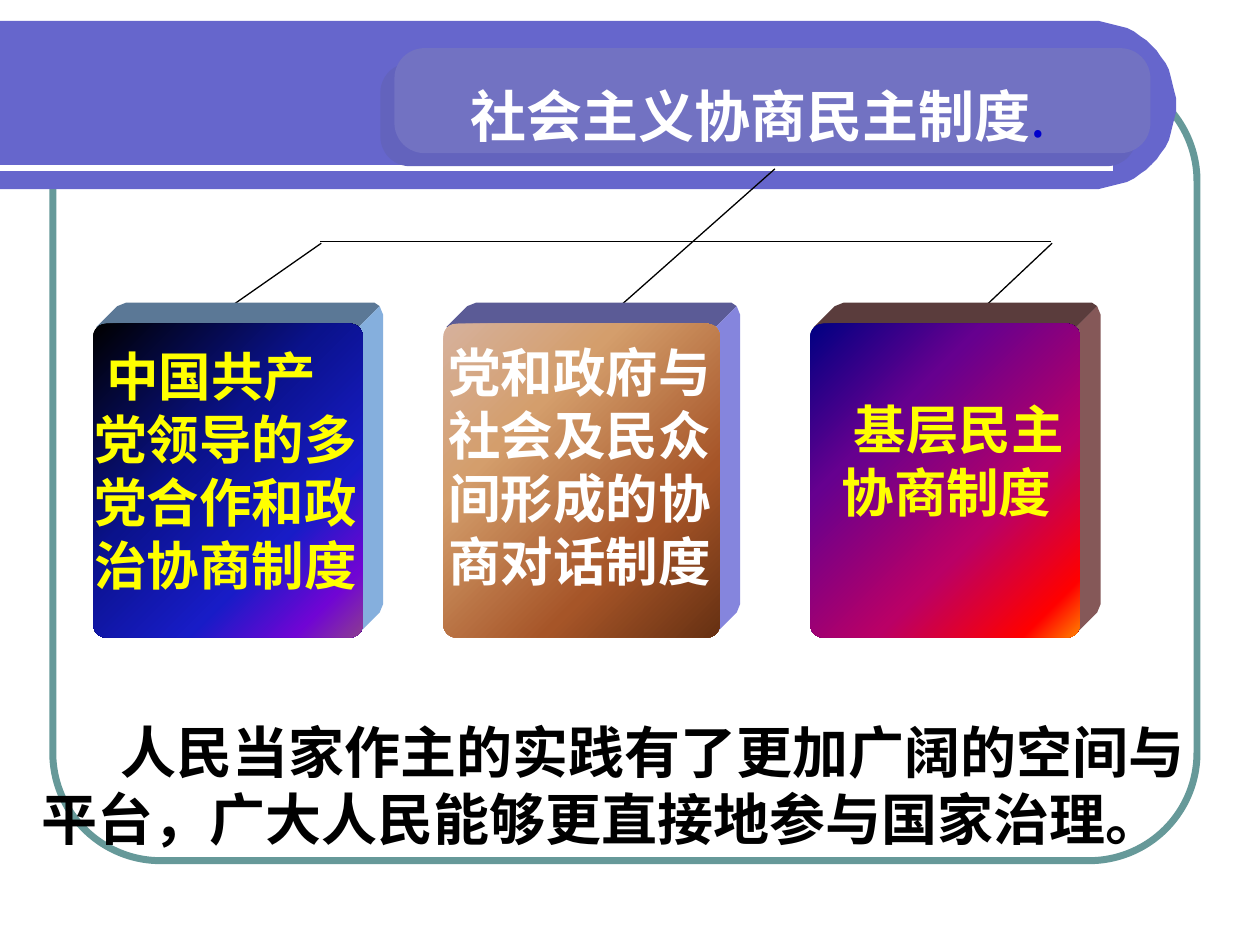
import math

import pptx
import pptx.dml.color
import pptx.enum.shapes
import pptx.enum.text
import pptx.oxml.ns
import pptx.util
from lxml import etree

Pt = pptx.util.Pt
RGB = pptx.dml.color.RGBColor
PRESET = pptx.enum.shapes.MSO_SHAPE
ANCHOR = pptx.enum.text.MSO_ANCHOR
qn = pptx.oxml.ns.qn

BLACK, WHITE = RGB(0, 0, 0), RGB(255, 255, 255)
YELLOW, BLUE = RGB(255, 255, 0), RGB(0, 0, 0xCC)
TEAL, VIOLET = RGB(0x66, 0x99, 0x99), RGB(0x66, 0x66, 0xCC)
PANEL, PANEL_EDGE = RGB(0x72, 0x72, 0xC2), RGB(0x63, 0x63, 0xBD)
DEPTH = 12  # how far the raised cards reach back, up and to the right


class Board:
    """Holds the slide and its font, and draws each kind of element."""

    def __init__(self, slide, font):
        self.slide, self.shapes, self.font = slide, slide.shapes, font

    def paint(self, shape, fill=None, line=None, width=1):
        shape.shadow.inherit = False
        if fill is None:
            shape.fill.background()
        else:
            shape.fill.solid()
            shape.fill.fore_color.rgb = fill
        if line is None:
            shape.line.fill.background()
        else:
            shape.line.color.rgb = line
            shape.line.width = Pt(width)

    def rounded(self, x, y, w, h, corner, **style):
        shape = self.shapes.add_shape(PRESET.ROUNDED_RECTANGLE, Pt(x), Pt(y), Pt(w), Pt(h))
        shape.adjustments[0] = corner
        self.paint(shape, **style)
        return shape

    def outline(self, points, fill):
        builder = self.shapes.build_freeform(*points[0], scale=Pt(1))
        builder.add_line_segments(points[1:], close=True)
        self.paint(builder.convert_to_shape(), fill)

    def line(self, x1, y1, x2, y2, color=BLACK, width=0.75):
        connector = self.shapes.add_connector(
            pptx.enum.shapes.MSO_CONNECTOR.STRAIGHT, Pt(x1), Pt(y1), Pt(x2), Pt(y2))
        connector.line.color.rgb = color
        connector.line.width = Pt(width)
        etree.SubElement(connector.element.spPr, qn("a:effectLst"))

    def gradient(self, shape, stops):
        shape.fill.gradient()
        shape.fill.gradient_angle = 315
        stop_list = shape.element.spPr.find(qn("a:gradFill")).find(qn("a:gsLst"))
        for old in list(stop_list):
            stop_list.remove(old)
        for position, color in stops:
            stop = etree.SubElement(stop_list, qn("a:gs"), pos=str(position * 1000))
            etree.SubElement(stop, qn("a:srgbClr"), val=color)

    def card(self, x, y, w, h, top, side, stops):
        right, bottom = x + w, y + h
        near, far = 2, DEPTH - 2
        self.outline([(x + near, y + near), (x + DEPTH + near, y - far), (x + DEPTH + 7, y - DEPTH),
                      (right + 7, y - DEPTH), (right + far, y - far), (right - near, y + near)], top)
        self.outline([(right - near, y + near), (right + far, y - far), (right + DEPTH, y - 5),
                      (right + DEPTH, bottom - DEPTH - 7), (right + far, bottom - DEPTH - near),
                      (right - near, bottom - near)], side)
        self.gradient(self.rounded(x, y, w, h, 0.047), stops)

    def style(self, run, size, color, bold=True, latin=None):
        font = run.font
        font.name, font.size, font.bold = latin or self.font, Pt(size), bold
        font.color.rgb = color
        etree.SubElement(run._r.get_or_add_rPr(), qn("a:ea"), typeface=self.font)

    def text(self, x, y, w, h, words, size, color, indent=0, anchor=ANCHOR.TOP, latin=None):
        frame = self.shapes.add_textbox(Pt(x), Pt(y), Pt(w), Pt(h)).text_frame
        frame.word_wrap = True
        frame.vertical_anchor = anchor
        frame.text = words
        paragraph = frame.paragraphs[0]
        paragraph.line_spacing = Pt(size * 1.2)
        paragraph._p.get_or_add_pPr().set("indent", str(Pt(indent)))
        self.style(paragraph.runs[0], size, color, latin=latin)

    def title(self, x, y, w, h, words, mark, size):
        title = self.shapes.title
        title.left, title.top, title.width, title.height = Pt(x), Pt(y), Pt(w), Pt(h)
        frame = title.text_frame
        frame.word_wrap = False
        frame.vertical_anchor = ANCHOR.MIDDLE
        frame.text = words
        paragraph = frame.paragraphs[0]
        paragraph.alignment = pptx.enum.text.PP_ALIGN.CENTER
        paragraph.add_run().text = mark
        self.style(paragraph.runs[0], size, WHITE)
        self.style(paragraph.runs[1], size, BLUE, bold=False)
        self.shapes._spTree.append(title.element)  # bring in front of the panel


def main():
    deck = pptx.Presentation()
    deck.slide_width, deck.slide_height = Pt(720), Pt(540)
    board = Board(deck.slides.add_slide(deck.slide_layouts[5]), "Noto Sans CJK SC")

    # Frame and header band with a half-round end
    board.rounded(30.2, 41.8, 653.8, 450, 0.137, line=TEAL, width=4)
    radius, center_x, center_y = 48, 624, 60
    angles = [math.radians(a) for a in range(-90, 91, 5)]
    arc = [(center_x + radius * math.cos(a), center_y + radius * math.sin(a)) for a in angles]
    board.outline([(0, 12), *arc, (0, 108)], VIOLET)
    board.line(0, 96, 636, 96, WHITE, 3)

    # Conclusion
    board.text(16.6, 394.6, 675.4, 95.8,
               "人民当家作主的实践有了更加广阔的空间与平台，广大人民能够更直接地参与国家治理。",
               32, BLACK, indent=45, anchor=ANCHOR.BOTTOM, latin="Arial")

    # Heading on its raised panel
    board.rounded(217.4, 36, 432, 59, 0.287, fill=PANEL_EDGE)
    board.rounded(225.4, 27.5, 432, 60, 0.287, fill=PANEL)
    board.title(217.4, 36, 432, 60, "社会主义协商民主制度", ".", 32)

    # Branches from the heading to the three systems
    for branch in [(183, 138, 600.5, 138), (133.2, 174.2, 183.6, 139),
                   (354.2, 175, 442.8, 96.5), (563, 175, 601.2, 139)]:
        board.line(*branch)

    # The three systems: card, then its text
    systems = [
        ((53.3, 154), RGB(0x5B, 0x78, 0x96), RGB(0x85, 0xAF, 0xDD),
         [(0, "000000"), (40, "0A128C"), (70, "181CC7"), (88, "7005D4"), (100, "8C3D91")],
         (46.8, 193), "中国共产党领导的多党合作和政治协商制度", YELLOW, 7),
        ((253.4, 158), RGB(0x5B, 0x5B, 0x96), RGB(0x85, 0x85, 0xDD),
         [(0, "D6B19C"), (30, "D49E6C"), (70, "A65528"), (100, "663012")],
         (249.1, 190.8), "党和政府与社会及民众间形成的协商对话制度", WHITE, 0),
        ((463, 154), RGB(0x5A, 0x3C, 0x3C), RGB(0x85, 0x58, 0x58),
         [(0, "000082"), (30, "66008F"), (65, "BA0066"), (90, "FF0000"), (100, "FF8200")],
         (473.8, 223.2), "基层民主协商制度", YELLOW, 7),
    ]
    for (x, width), top, side, stops, (text_x, text_y), words, color, indent in systems:
        board.card(x, 185, width, 179.3, top, side, stops)
        board.text(text_x, text_y, 168.5, 152.6, words, 30, color, indent)

    deck.save("out.pptx")


if __name__ == "__main__":
    main()
